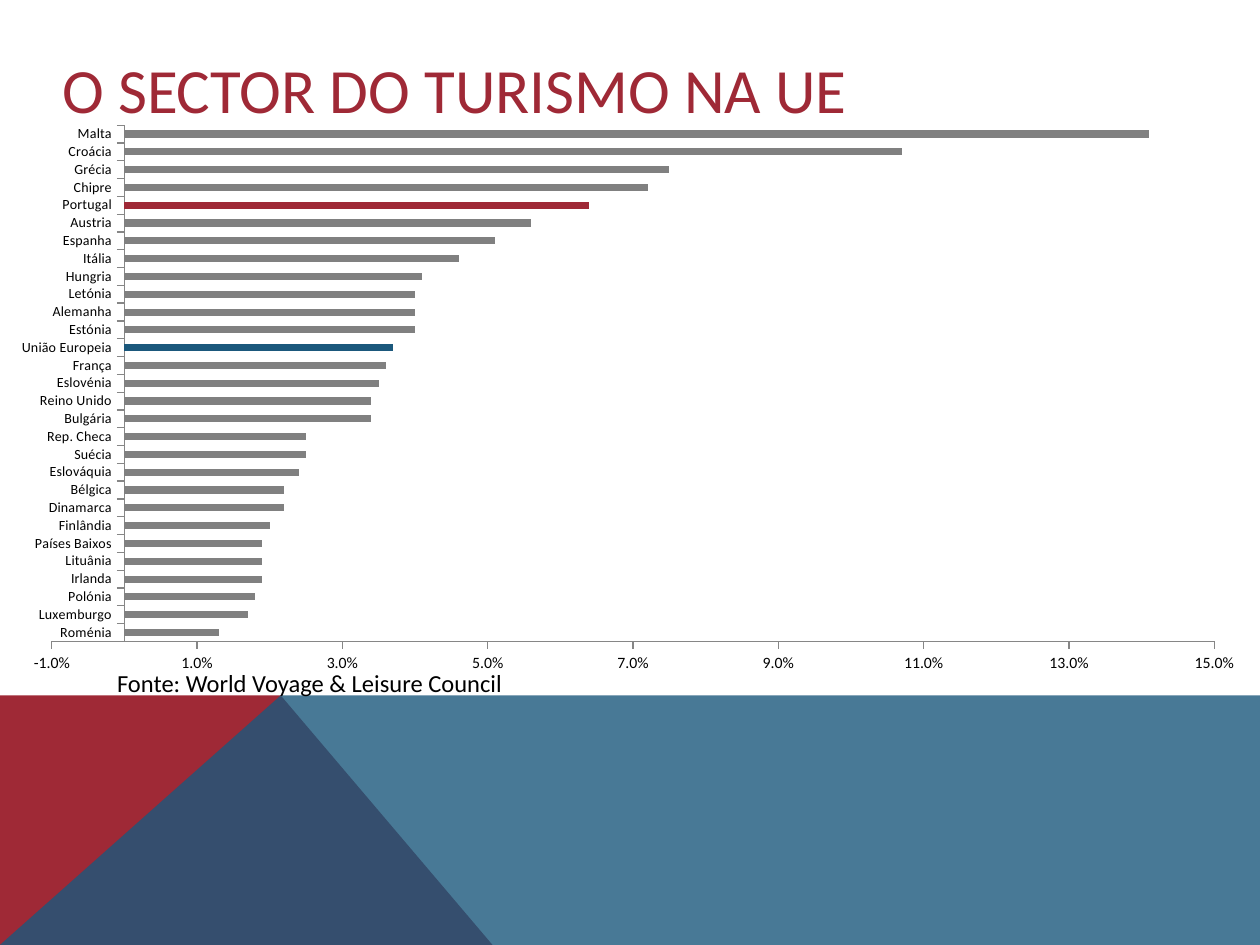
import pptx
import pptx.chart.data
import pptx.dml.color
import pptx.enum.chart
import pptx.enum.text
import pptx.oxml
import pptx.oxml.ns
import pptx.util
from dataclasses import dataclass
from lxml import etree

Cm, Pt = pptx.util.Cm, pptx.util.Pt
FONT = "Calibri"
RED, BLUE, GREY, BLACK = "9F2936", "1B587C", "808080", "000000"
AXIS = "868686"


@dataclass
class Panel:
    points: list[tuple[float, float]]  # corners in cm
    color: str
    alpha: int = 100


@dataclass
class Bar:
    name: str
    share: float  # percent
    color: str = GREY


# Bottom band: red wedge under a translucent blue panel
TOP, PEAK, WIDE, TALL = 14.02, 5.66, 25.4, 19.05
PANELS = [
    Panel([(0, TALL), (0, TOP), (PEAK, TOP), (9.93, TALL)], RED),
    Panel([(0, TALL), (PEAK, TOP), (WIDE, TOP), (WIDE, TALL)], BLUE, 80),
]

# Bars from bottom to top
BARS = [
    Bar("Roménia", 1.3), Bar("Luxemburgo", 1.7), Bar("Polónia", 1.8),
    Bar("Irlanda", 1.9), Bar("Lituânia", 1.9), Bar("Países Baixos", 1.9),
    Bar("Finlândia", 2.0), Bar("Dinamarca", 2.2), Bar("Bélgica", 2.2),
    Bar("Eslováquia", 2.4), Bar("Suécia", 2.5), Bar("Rep. Checa", 2.5),
    Bar("Bulgária", 3.4), Bar("Reino Unido", 3.4), Bar("Eslovénia", 3.5),
    Bar("França", 3.6), Bar("União Europeia", 3.7, BLUE),
    Bar("Estónia", 4.0), Bar("Alemanha", 4.0), Bar("Letónia", 4.0),
    Bar("Hungria", 4.1), Bar("Itália", 4.6), Bar("Espanha", 5.1),
    Bar("Austria", 5.6), Bar("Portugal", 6.4, RED), Bar("Chipre", 7.2),
    Bar("Grécia", 7.5), Bar("Croácia", 10.7), Bar("Malta", 14.1),
]


def rgb(code: str) -> pptx.dml.color.RGBColor:
    return pptx.dml.color.RGBColor.from_string(code)


def paint(fill, code: str) -> None:
    fill.solid()
    fill.fore_color.rgb = rgb(code)


def style(font, size: float, code: str) -> None:
    font.name, font.size = FONT, Pt(size)
    font.color.rgb = rgb(code)


def draw_panel(slide, panel: Panel) -> None:
    dots = [(Cm(x), Cm(y)) for x, y in panel.points]
    pen = slide.shapes.build_freeform(*dots[0])
    pen.add_line_segments(dots[1:], close=True)
    shape = pen.convert_to_shape()
    shape.shadow.inherit = False
    shape.line.fill.background()
    paint(shape.fill, panel.color)
    if panel.alpha < 100:
        tint = shape.element.spPr.find(".//" + pptx.oxml.ns.qn("a:srgbClr"))
        alpha = etree.SubElement(tint, pptx.oxml.ns.qn("a:alpha"))
        alpha.set("val", str(panel.alpha * 1000))


def write(shape, text: str, size: float, code: str) -> None:
    frame = shape.text_frame
    frame.word_wrap = True
    line = frame.paragraphs[0]
    line.alignment = pptx.enum.text.PP_ALIGN.LEFT
    run = line.add_run()
    run.text = text
    style(run.font, size, code)


def place_plot(chart, x: float, y: float, w: float, h: float) -> None:
    """Fix the inner plot area, in fractions of the chart."""
    area = chart.element.xpath("c:chart/c:plotArea")[0]
    for old in area.xpath("c:layout"):
        area.remove(old)
    modes = '<c:layoutTarget val="inner"/><c:xMode val="edge"/><c:yMode val="edge"/>'
    sizes = "".join(f'<c:{k} val="{v}"/>' for k, v in zip("xywh", (x, y, w, h)))
    area.insert(0, pptx.oxml.parse_xml(
        f'<c:layout {pptx.oxml.ns.nsdecls("c")}>'
        f"<c:manualLayout>{modes}{sizes}</c:manualLayout></c:layout>"))


def draw_chart(slide, bars: list[Bar]) -> None:
    enum = pptx.enum.chart
    data = pptx.chart.data.CategoryChartData(number_format="0.0%")
    data.categories = [bar.name for bar in bars]
    data.add_series("Series 1", [round(bar.share / 100, 3) for bar in bars])
    chart = slide.shapes.add_chart(
        enum.XL_CHART_TYPE.BAR_CLUSTERED,
        Cm(0.3), Cm(2.51), Cm(24.8), Cm(11.23), data).chart
    chart.has_legend = chart.has_title = False
    style(chart.font, 10, BLACK)
    place_plot(chart, 0.03, 0, 0.945, 0.928)

    # Bars, with the highlighted ones in their own colour
    plot = chart.plots[0]
    plot.gap_width, plot.vary_by_categories = 150, False
    series = plot.series[0]
    series.invert_if_negative = False
    paint(series.format.fill, GREY)
    for i, bar in enumerate(bars):
        if bar.color != GREY:
            paint(series.points[i].format.fill, bar.color)

    # Axes
    for axis, size in ((chart.category_axis, 8), (chart.value_axis, 9)):
        axis.has_major_gridlines = False
        axis.major_tick_mark = enum.XL_TICK_MARK.OUTSIDE
        axis.minor_tick_mark = enum.XL_TICK_MARK.NONE
        axis.format.line.color.rgb = rgb(AXIS)
        axis.format.line.width = Pt(0.75)
        style(axis.tick_labels.font, size, BLACK)
    scale = chart.value_axis
    scale.minimum_scale, scale.maximum_scale = -0.01, 0.15
    scale.major_unit = 0.02
    scale.tick_labels.number_format = "0.0%"
    scale.tick_labels.number_format_is_linked = False


def main() -> None:
    deck = pptx.Presentation()
    deck.slide_width, deck.slide_height = Cm(WIDE), Cm(TALL)
    slide = deck.slides.add_slide(deck.slide_layouts[5])
    paint(slide.background.fill, "FFFFFF")

    for panel in PANELS:
        draw_panel(slide, panel)

    # Title
    title = slide.shapes.title
    title.left, title.top = Cm(1), Cm(1.02)
    title.width, title.height = Cm(23.5), Cm(1.52)
    title.text_frame.vertical_anchor = pptx.enum.text.MSO_ANCHOR.MIDDLE
    title.text_frame.auto_size = pptx.enum.text.MSO_AUTO_SIZE.NONE
    write(title, "O SECTOR DO TURISMO NA UE", 36, RED)

    # Source line and chart
    note = slide.shapes.add_textbox(Cm(2.11), Cm(13.34), Cm(12.4), Cm(0.86))
    write(note, "Fonte: World Voyage & Leisure Council", 14, BLACK)
    draw_chart(slide, BARS)

    deck.save("out.pptx")


if __name__ == "__main__":
    main()
